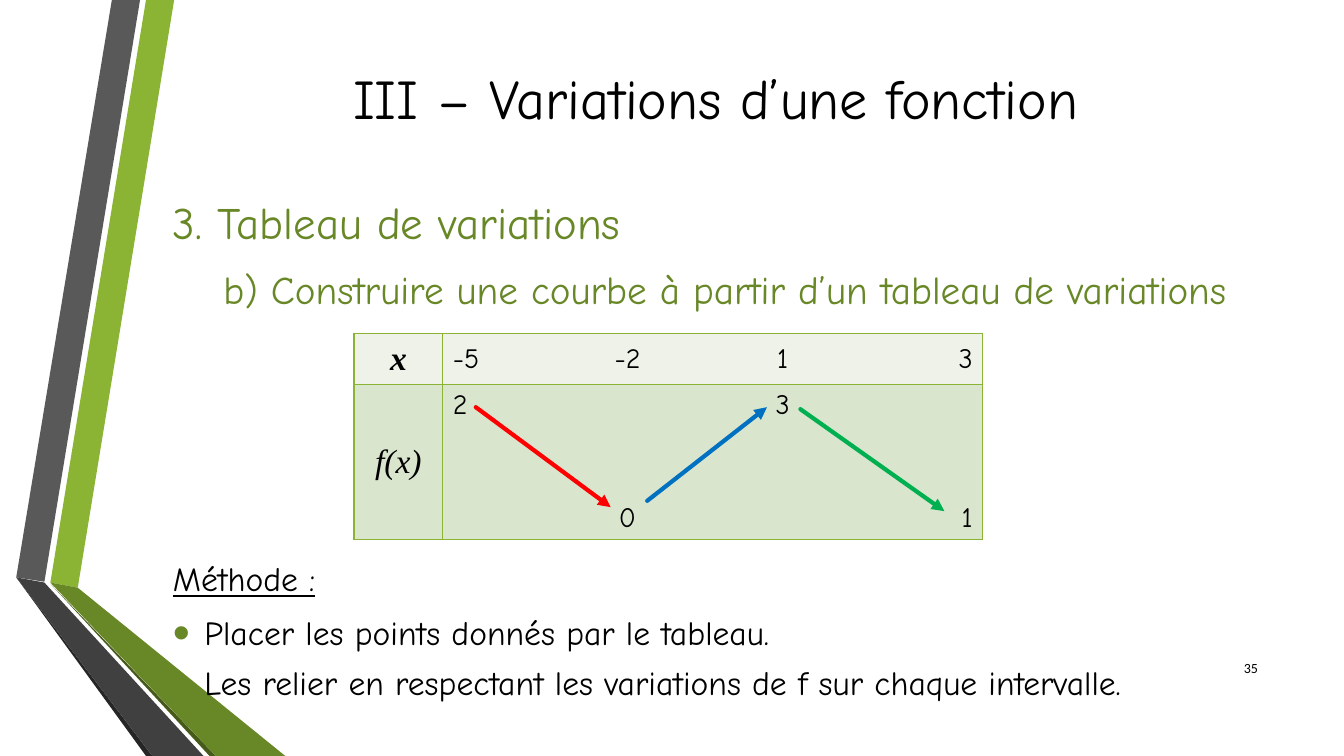
from dataclasses import dataclass

from lxml import etree
from pptx import Presentation
from pptx.dml.color import RGBColor
from pptx.enum.shapes import MSO_CONNECTOR
from pptx.enum.text import MSO_ANCHOR, PP_ALIGN
from pptx.oxml.ns import qn
from pptx.util import Cm, Pt

LEFT, CENTER, RIGHT = PP_ALIGN.LEFT, PP_ALIGN.CENTER, PP_ALIGN.RIGHT
TOP, MIDDLE, BOTTOM = MSO_ANCHOR.TOP, MSO_ANCHOR.MIDDLE, MSO_ANCHOR.BOTTOM
STRAIGHT = MSO_CONNECTOR.STRAIGHT


@dataclass(frozen=True)
class Theme:
    """Colours, fonts and type sizes of the deck."""
    ink: str = "000000"
    lime: str = "8BB434"
    olive: str = "688727"
    moss: str = "465A1A"
    gray: str = "595959"
    coal: str = "404040"
    night: str = "262626"
    pale: str = "EEF2E8"
    sage: str = "DAE5CE"
    red: str = "FF0000"
    blue: str = "0070C0"
    green: str = "00B050"
    hand: str = "Comic Neue"
    serif: str = "Times New Roman"
    plain: str = "Calibri"
    title: int = 40
    head: int = 32
    sub: int = 28
    body: int = 24
    cell: int = 20
    note: int = 10


def child(node, tag, **attrs):
    """Append a DrawingML element to a node."""
    return etree.SubElement(node, qn(tag), attrs)


def write(par, text, size, color, font, align=LEFT, bold=False, italic=False,
          under=False, spaced=False, indent=0, bullet=None):
    """Put formatted text into a paragraph."""
    run = par.add_run()
    run.text = text
    face = run.font
    face.size, face.name = Pt(size), font
    face.bold, face.italic, face.underline = bold, italic, under
    face.color.rgb = RGBColor.from_string(color)
    par.alignment = align
    if spaced:
        par.space_before, par.space_after = Pt(size * 0.2), Pt(6)
    props = par._p.get_or_add_pPr()
    if indent:
        props.set("marL", str(Cm(indent)))
    if bullet:
        props.set("indent", str(-Cm(indent)))
        child(child(props, "a:buClr"), "a:srgbClr", val=bullet)
        child(props, "a:buSzPct", val="145000")
        child(props, "a:buFont", typeface="Arial")
        child(props, "a:buChar", char="•")


class Page:
    """One slide and the theme it is drawn with."""

    def __init__(self, deck, theme):
        """Add a title-only slide to the deck."""
        self.theme = theme
        self.slide = deck.slides.add_slide(deck.slide_layouts[5])
        self.shapes = self.slide.shapes

    def title(self, text, area):
        """Place and fill the title."""
        shape = self.shapes.title
        shape.left, shape.top, shape.width, shape.height = map(Cm, area)
        frame = shape.text_frame
        frame.vertical_anchor, frame.word_wrap = MIDDLE, True
        write(frame.paragraphs[0], text, self.theme.title, self.theme.ink,
              self.theme.hand, CENTER)

    def band(self, color, points):
        """Draw a filled polygon."""
        spots = [(Cm(x), Cm(y)) for x, y in points]
        pen = self.shapes.build_freeform(*spots[0])
        pen.add_line_segments(spots[1:])
        shape = pen.convert_to_shape()
        shape.shadow.inherit = False
        shape.fill.solid()
        shape.fill.fore_color.rgb = RGBColor.from_string(color)
        shape.line.fill.background()

    def text(self, area, lines, anchor=MIDDLE, wrap=True):
        """Add a text box with one paragraph for each line."""
        frame = self.shapes.add_textbox(*map(Cm, area)).text_frame
        frame.word_wrap, frame.vertical_anchor = wrap, anchor
        for i, (text, style) in enumerate(lines):
            par = frame.add_paragraph() if i else frame.paragraphs[0]
            write(par, text, **style)

    def arrow(self, color, start, end):
        """Draw a thick arrow."""
        line = self.shapes.add_connector(STRAIGHT, *map(Cm, start + end))
        line.line.width = Pt(3)
        line.line.color.rgb = RGBColor.from_string(color)
        edge = line.line._get_or_add_ln()
        edge.set("cap", "rnd")
        child(edge, "a:tailEnd", type="triangle")
        child(line._element.spPr, "a:effectLst")

    def edges(self, cell, sides):
        """Rule the given sides of a cell and clear the others."""
        props = cell._tc.get_or_add_tcPr()
        for side in "LRTB":
            edge = child(props, f"a:ln{side}", w=str(Pt(1)))
            if side in sides:
                fill = child(edge, "a:solidFill")
                child(fill, "a:srgbClr", val=self.theme.lime)
            else:
                child(edge, "a:noFill")

    def table(self, spot, cols, rows, cells, fills):
        """Add a variation table whose first column holds the labels."""
        size = (sum(cols), sum(rows))
        grid = self.shapes.add_table(len(rows), len(cols),
                                     *map(Cm, spot + size)).table
        grid.first_row = grid.horz_banding = False
        for col, width in zip(grid.columns, cols):
            col.width = Cm(width)
        for row, height in zip(grid.rows, rows):
            row.height = Cm(height)
        last = len(cols) - 1
        for r, line in enumerate(cells):
            for c, (text, anchor) in enumerate(line):
                cell = grid.cell(r, c)
                sides = "TB" + "L" * (c < 2) + "R" * (c in (0, last))
                self.edges(cell, sides)
                cell.fill.solid()
                cell.fill.fore_color.rgb = RGBColor.from_string(fills[r])
                cell.vertical_anchor = anchor
                label = c == 0
                write(cell.text_frame.paragraphs[0], text,
                      self.theme.body if label else self.theme.cell,
                      self.theme.ink,
                      self.theme.serif if label else self.theme.hand,
                      {1: LEFT, last: RIGHT}.get(c, CENTER),
                      bold=label and r == 0, italic=label)


def main():
    """Build the slide and save it."""
    deck = Presentation()
    deck.slide_width, deck.slide_height = Cm(33.87), Cm(19.05)
    look = Theme()
    page = Page(deck, look)
    left, wide, foot = 4.11, 27.84, 19.05

    bands = [
        (look.lime, [(1.27, 14.68), (1.96, 14.81), (4.39, 0), (3.68, 0)]),
        (look.gray, [(3.53, 0), (2.82, 0), (0.41, 14.55), (1.12, 14.66)]),
        (look.night, [(0.41, 14.55), (3.68, foot), (3.84, foot)]),
        (look.moss, [(1.27, 14.71), (5.28, foot), (5.44, foot)]),
        (look.olive, [(1.27, 14.68), (5.44, foot), (7.19, foot),
                      (1.96, 14.81)]),
        (look.coal, [(5.13, foot), (1.12, 14.68), (0.41, 14.55),
                     (3.84, foot)]),
    ]
    for color, points in bands:
        page.band(color, points)

    page.title("III – Variations d’une fonction", (left, 0, wide, 4.88))
    head = dict(color=look.olive, font=look.hand, spaced=True)
    page.text((left, 4.67, 29.26, 3.43), [
        ("3. Tableau de variations", dict(head, size=look.head)),
        ("b) Construire une courbe à partir d’un tableau de variations",
         dict(head, size=look.sub, indent=1.27)),
    ])

    page.table(
        (8.92, 8.41), (2.24, 3.4, 2.51, 5.31, 2.39), (1.22, 3.91),
        [[(text, MIDDLE) for text in ("x", "-5", "-2", "1", "3")],
         [("f(x)", MIDDLE), ("2", TOP), ("0", BOTTOM), ("3", TOP),
          ("1", BOTTOM)]],
        (look.pale, look.sage))
    page.arrow(look.red, (11.99, 10.26), (15.39, 12.78))
    page.arrow(look.blue, (16.31, 12.62), (19.33, 10.26))
    page.arrow(look.green, (20.17, 10.31), (23.8, 12.88))

    body = dict(size=look.body, color=look.ink, font=look.hand)
    page.text((left, 13.94, 4.57, 1.27),
              [("Méthode :", dict(body, under=True))], TOP, False)
    item = dict(body, spaced=True, indent=0.79, bullet=look.olive)
    steps = [
        (15.24, 1.4, "Placer les points donnés par le tableau."),
        (16.38, 1.6, "Les relier en respectant les variations de f "
                     "sur chaque intervalle."),
    ]
    for top, height, text in steps:
        page.text((left, top, wide, height), [(text, item)])
    page.text((30.43, 16.31, 1.52, 1.02),
              [("35", dict(size=look.note, color=look.ink, font=look.plain,
                           align=RIGHT))])
    deck.save("out.pptx")


if __name__ == "__main__":
    main()
